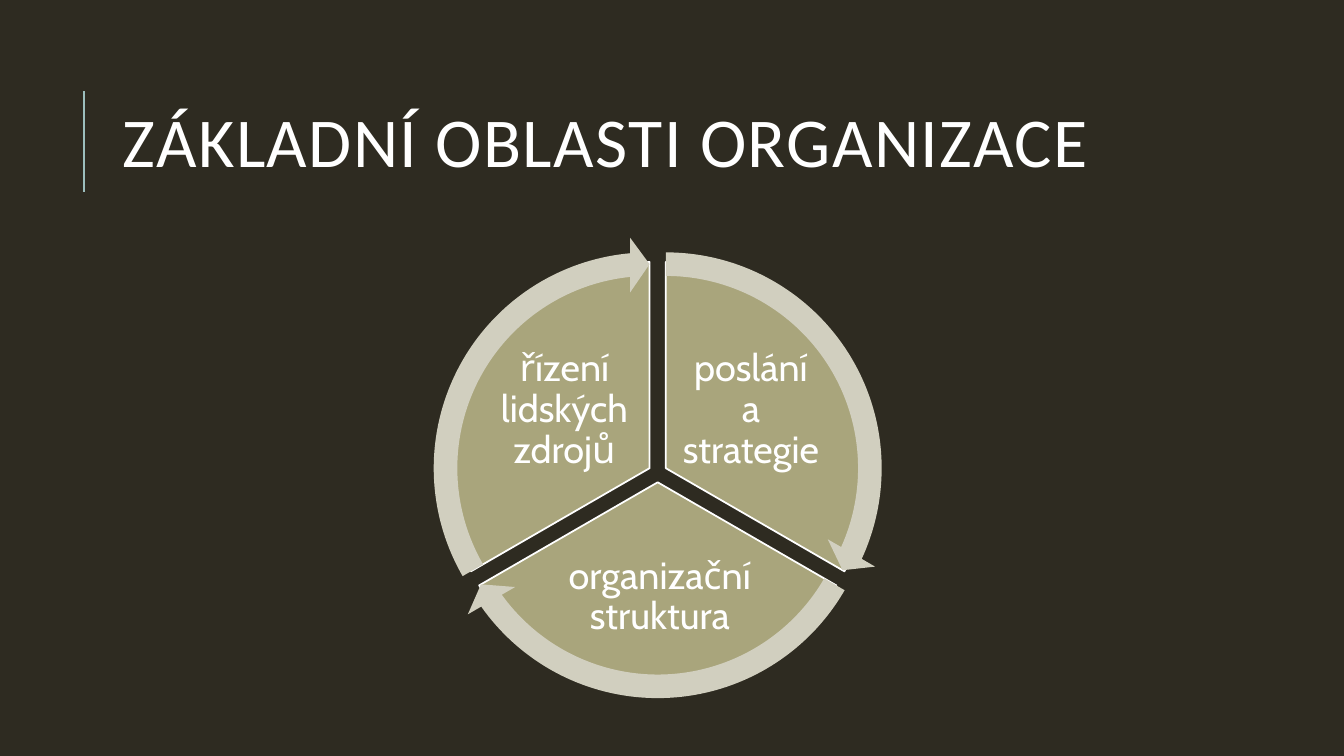
from math import cos, radians, sin

from lxml import etree
from pptx import Presentation
from pptx.dml.color import RGBColor
from pptx.enum.shapes import MSO_CONNECTOR, MSO_SHAPE
from pptx.enum.text import MSO_ANCHOR, PP_ALIGN
from pptx.oxml.ns import qn
from pptx.util import Pt

STRAIGHT = MSO_CONNECTOR.STRAIGHT
PIE, ARROW = MSO_SHAPE.PIE, MSO_SHAPE.CIRCULAR_ARROW
MIDDLE = MSO_ANCHOR.MIDDLE
LEFT, CENTER = PP_ALIGN.LEFT, PP_ALIGN.CENTER

DARK = RGBColor(0x2E, 0x2B, 0x21)
TEAL = RGBColor(0x9C, 0xBE, 0xBD)
OLIVE = RGBColor(0xA9, 0xA5, 0x7C)
SAND = RGBColor(0xD1, 0xCF, 0xBF)
WHITE = RGBColor(0xFF, 0xFF, 0xFF)

# Cycle geometry in points; each sector is pushed outwards from the centre
CENTER_X, CENTER_Y, OFFSET = 469.8, 337.8, 6.7
PIE_SIZE, ARROW_SIZE = 294.5, 330.5
HEAD_ANGLE = 3.275  # angles in adjustments: 0.6 units per degree
UNITS_PER_DEGREE = 0.6

# Start angle, end angle, label, label box
SECTORS = [
    (270, 30, "poslání a strategie", (483.8, 249.1, 105.1, 87.8)),
    (30, 150, "organizační struktura", (392.4, 388.1, 157.7, 77)),
    (150, 270, "řízení lidských zdrojů", (350.6, 249.1, 105.1, 87.8)),
]


def add_text(s, box, text, font, size, align, spacing, inset=None):
    sp = s.shapes.add_textbox(*map(Pt, box))
    tf = sp.text_frame
    tf.word_wrap = True
    tf.vertical_anchor = MIDDLE
    if inset is not None:
        tf.margin_left = tf.margin_right = Pt(inset)
        tf.margin_top = tf.margin_bottom = Pt(inset)
    p = tf.paragraphs[0]
    p.alignment = align
    p.line_spacing = spacing
    r = p.add_run()
    r.text = text
    r.font.name = font
    r.font.size = Pt(size)
    r.font.color.rgb = WHITE
    return r


def add_cycle_shape(s, kind, size, start, fill, adjustments):
    middle = radians(start + 60)
    x = CENTER_X + OFFSET * cos(middle) - size / 2
    y = CENTER_Y + OFFSET * sin(middle) - size / 2
    sp = s.shapes.add_shape(kind, Pt(x), Pt(y), Pt(size), Pt(size))
    sp.shadow.inherit = False
    sp.fill.solid()
    sp.fill.fore_color.rgb = fill
    for i, value in enumerate(adjustments):
        sp.adjustments[i] = value
    return sp


def add_sector(s, start, end):
    angles = [start * UNITS_PER_DEGREE, end * UNITS_PER_DEGREE]
    sp = add_cycle_shape(s, PIE, PIE_SIZE, start, OLIVE, angles)
    sp.line.color.rgb = WHITE
    sp.line.width = Pt(1.25)


def add_arrow(s, start, end):
    adjustments = [0.051, HEAD_ANGLE, end * UNITS_PER_DEGREE - HEAD_ANGLE,
                   start * UNITS_PER_DEGREE, 0.059]
    sp = add_cycle_shape(s, ARROW, ARROW_SIZE, start, SAND, adjustments)
    sp.line.fill.background()


def add_rule(s, x, top, bottom):
    line = s.shapes.add_connector(STRAIGHT, Pt(x), Pt(bottom), Pt(x), Pt(top))
    line.line.color.rgb = TEAL
    line.line.width = Pt(1.5)
    etree.SubElement(line._element.spPr, qn("a:effectLst"))


def main():
    prs = Presentation()
    prs.slide_width, prs.slide_height = Pt(960), Pt(540)
    s = prs.slides.add_slide(prs.slide_layouts[6])
    s.background.fill.solid()
    s.background.fill.fore_color.rgb = DARK

    # Title with its vertical rule
    add_rule(s, 60, 65, 137)
    r = add_text(s, (80.6, 46.1, 765.4, 118.1), "ZÁKLADNÍ OBLASTI ORGANIZACE",
                 "Calibri", 50, LEFT, 0.8)
    r.font._element.set("spc", "100")

    # Sectors with labels
    for start, end, label, box in SECTORS:
        add_sector(s, start, end)
        add_text(s, box, label, "Cabin", 27, CENTER, 0.9, inset=2.7)

    # Arrows around the sectors
    for start, end, _, _ in SECTORS:
        add_arrow(s, start, end)

    prs.save("out.pptx")


if __name__ == "__main__":
    main()
